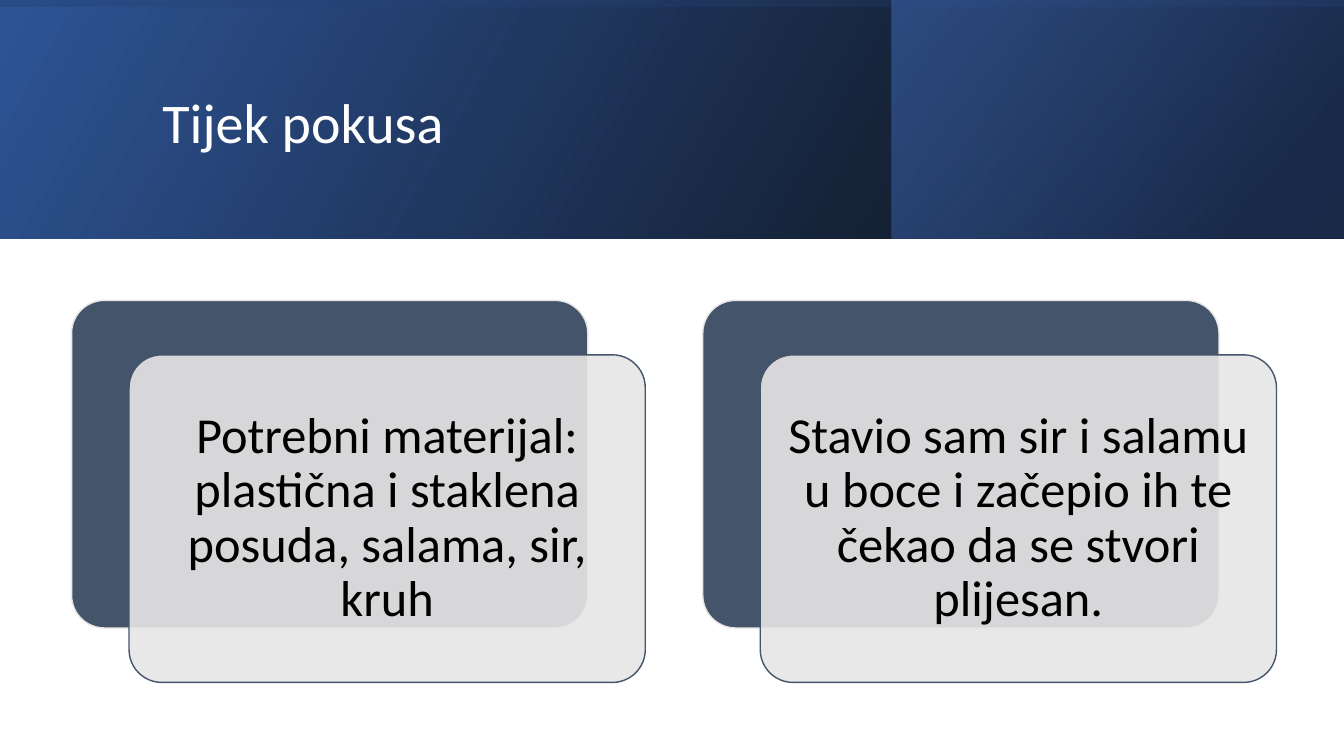
from lxml import etree
from pptx import Presentation
from pptx.dml.color import RGBColor
from pptx.enum.shapes import MSO_SHAPE as Shape
from pptx.enum.text import MSO_ANCHOR as Anchor, PP_ALIGN as Align
from pptx.oxml.ns import qn
from pptx.util import Inches, Pt

TITLE = "Tijek pokusa"
STEPS = [
    "Potrebni materijal: plastična i staklena posuda, salama, sir, kruh",
    "Stavio sam sir i salamu u boce i začepio ih te čekao da se stvori plijesan.",
]
HEX = {
    "black": "000000", "white": "FFFFFF", "slate": "44546A", "pale": "E7E6E6",
    "blue": "2F5597", "navy": "203864", "sky": "4472C4",
}
WIDE, HIGH = 13.33, 7.5
BAND = 2.37
SIDE = 8.84
MID = (WIDE - BAND) / 2
# box, turn, gradient angle, stops of (position, colour, opacity)
BANDS = [
    ((0, 0, WIDE, BAND), 0, 330, [(0, "black", 96), (100, "blue", 100)]),
    ((SIDE, 0, WIDE - SIDE, BAND), 0, 320, [(19, "navy", 68), (100, "sky", 48)]),
    ((MID, -MID, BAND, WIDE), 270, 350, [(23, "blue", 16), (99, "black", 45)]),
]
CARD = (5.12, 3.25)
LEFT, TOP, PITCH = 0.71, 2.98, 6.26
SHIFT = (0.57, 0.54)


def color(name):
    return RGBColor.from_string(HEX[name])


def fade(clr, share):
    """Set the opacity of a colour element, in percent."""
    etree.SubElement(clr, qn("a:alpha"), val=str(share * 1000))


def write(frame, text, size, tint, align, inset=None):
    frame.word_wrap = True
    frame.vertical_anchor = Anchor.MIDDLE
    if inset is not None:
        frame.margin_left = frame.margin_right = Inches(inset)
        frame.margin_top = frame.margin_bottom = Inches(inset)
    para = frame.paragraphs[0]
    para.alignment = align
    para.line_spacing = 0.9
    run = para.add_run()
    run.text = text
    run.font.size = Pt(size)
    run.font.name = "Calibri"
    run.font.color.rgb = color(tint)


def add_band(shapes, box, turn, angle, stops):
    band = shapes.add_shape(Shape.RECTANGLE, *map(Inches, box))
    band.shadow.inherit = False
    band.line.fill.background()
    band.rotation = turn
    props = band._element.spPr
    props.find(qn("a:xfrm")).set("flipH", "1")
    grad = etree.Element(qn("a:gradFill"), rotWithShape="1")
    rows = etree.SubElement(grad, qn("a:gsLst"))
    for pos, name, share in stops:
        stop = etree.SubElement(rows, qn("a:gs"), pos=str(pos * 1000))
        fade(etree.SubElement(stop, qn("a:srgbClr"), val=HEX[name]), share)
    etree.SubElement(grad, qn("a:lin"), ang=str(angle * 60000), scaled="0")
    props.find(qn("a:prstGeom")).addnext(grad)


def add_card(shapes, left, top, fill, edge):
    card = shapes.add_shape(Shape.ROUNDED_RECTANGLE, *map(Inches, (left, top, *CARD)))
    card.adjustments[0] = 0.1
    card.shadow.inherit = False
    card.fill.solid()
    card.fill.fore_color.rgb = color(fill)
    card.line.color.rgb = color(edge)
    card.line.width = Pt(1)
    return card


def main():
    deck = Presentation()
    deck.slide_width, deck.slide_height = Inches(WIDE), Inches(HIGH)
    slide = deck.slides.add_slide(deck.slide_layouts[5])
    shapes = slide.shapes

    for band in BANDS:
        add_band(shapes, *band)

    title = shapes.title
    title.left, title.top = Inches(1.51), Inches(0.38)
    title.width, title.height = Inches(10.63), Inches(1.72)
    write(title.text_frame, TITLE, 40, "white", Align.LEFT)
    shapes._spTree.append(title._element)

    group = shapes.add_group_shape()
    for col, text in enumerate(STEPS):
        left = LEFT + col * PITCH
        add_card(group.shapes, left, TOP, "slate", "pale")
        front = add_card(group.shapes, left + SHIFT[0], TOP + SHIFT[1], "pale", "slate")
        fade(front._element.spPr.find(qn("a:solidFill"))[0], 90)
        write(front.text_frame, text, 36, "black", Align.CENTER, inset=0.15)

    deck.save("out.pptx")


if __name__ == "__main__":
    main()
